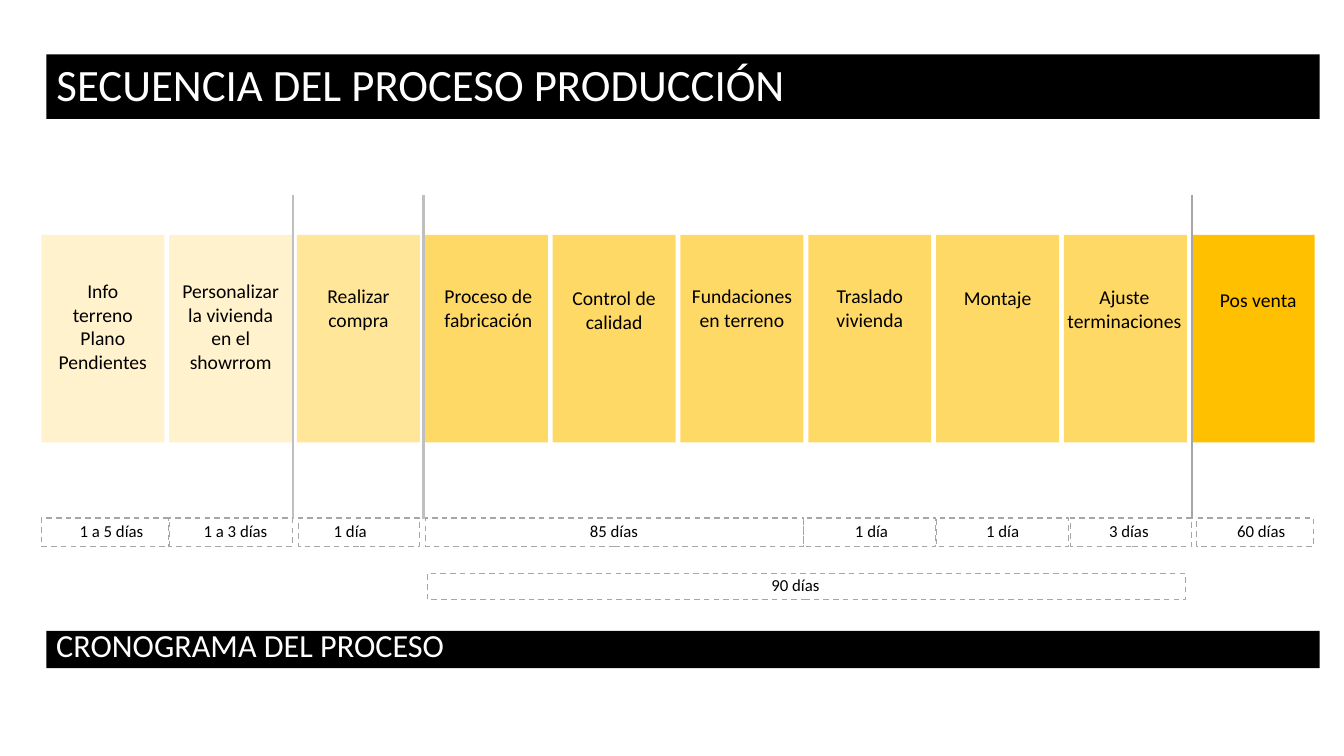
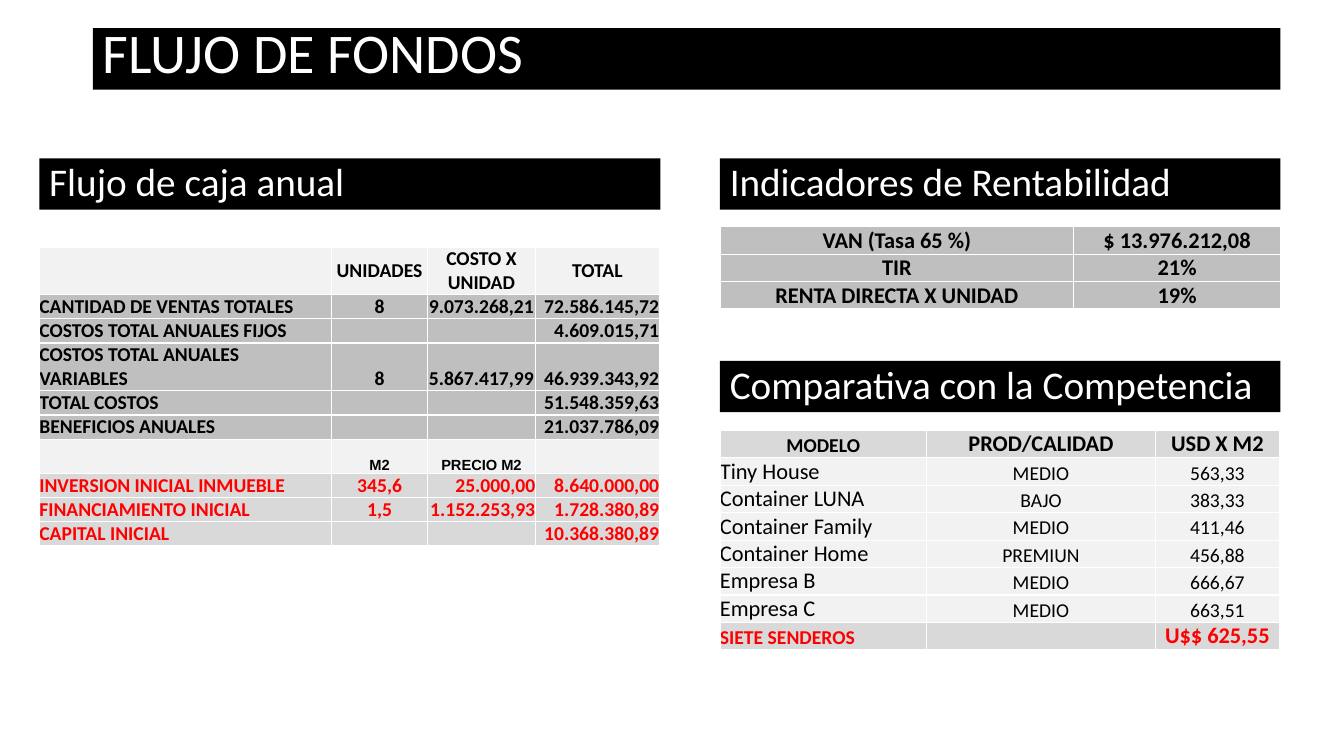
from dataclasses import dataclass

from lxml import etree
from pptx import Presentation
from pptx.dml.color import RGBColor
from pptx.enum.dml import MSO_LINE
from pptx.enum.shapes import MSO_CONNECTOR, MSO_SHAPE
from pptx.enum.text import MSO_ANCHOR, MSO_AUTO_SIZE, PP_ALIGN
from pptx.oxml.ns import qn
from pptx.util import Inches, Pt

BLACK = RGBColor(0x00, 0x00, 0x00)
WHITE = RGBColor(0xFF, 0xFF, 0xFF)
RED = RGBColor(0xFF, 0x00, 0x00)
PALE_GREY = RGBColor(0xF2, 0xF2, 0xF2)
LIGHT_GREY = RGBColor(0xD9, 0xD9, 0xD9)
GREY = RGBColor(0xBF, 0xBF, 0xBF)
DARK_GREY = RGBColor(0xA6, 0xA6, 0xA6)
CREAM = RGBColor(0xFF, 0xF2, 0xCC)
SAND = RGBColor(0xFF, 0xE6, 0x99)
YELLOW = RGBColor(0xFF, 0xD9, 0x66)
AMBER = RGBColor(0xFF, 0xC0, 0x00)

LEFT = PP_ALIGN.LEFT
CENTER = PP_ALIGN.CENTER
RIGHT = PP_ALIGN.RIGHT
TOP = MSO_ANCHOR.TOP
MIDDLE = MSO_ANCHOR.MIDDLE
BOTTOM = MSO_ANCHOR.BOTTOM
RECTANGLE = MSO_SHAPE.RECTANGLE
STRAIGHT = MSO_CONNECTOR.STRAIGHT
DASH = MSO_LINE.DASH
NO_AUTOFIT = MSO_AUTO_SIZE.NONE
ALIGNMENTS = {"l": LEFT, "c": CENTER, "r": RIGHT}
TITLE_ONLY = 5


@dataclass
class RowStyle:
    fill: RGBColor
    aligns: str
    sizes: tuple
    color: RGBColor = BLACK
    bold: bool = True
    font: str = "Calibri"
    anchor: MSO_ANCHOR = BOTTOM


class DeckBuilder:
    font = "Calibri"

    def __init__(self):
        self.deck = Presentation()
        self.deck.slide_width = Inches(13.33)
        self.deck.slide_height = Inches(7.5)
        self.page = None

    def add_page(self):
        layout = self.deck.slide_layouts[TITLE_ONLY]
        self.page = self.deck.slides.add_slide(layout)

    def set_text(self, frame, text, size, color=BLACK, align=LEFT, spacing=None,
                 bold=False, font=None):
        frame.text = text
        for para in frame.paragraphs:
            para.alignment = align
            if spacing:
                para.line_spacing = spacing
            for span in para.runs:
                span.font.size = Pt(size)
                span.font.name = font or self.font
                span.font.bold = bold
                span.font.color.rgb = color

    def place_text(self, box, anchor, left=0.1, top=0.05, right=0.1, bottom=0.05):
        frame = box.text_frame
        frame.word_wrap = True
        frame.auto_size = NO_AUTOFIT
        frame.vertical_anchor = anchor
        frame.margin_left, frame.margin_right = Inches(left), Inches(right)
        frame.margin_top, frame.margin_bottom = Inches(top), Inches(bottom)
        return frame

    def rectangle(self, left, top, width, height, fill=None):
        box = self.page.shapes.add_shape(
            RECTANGLE, Inches(left), Inches(top), Inches(width), Inches(height))
        box.shadow.inherit = False
        if fill is None:
            box.fill.background()
        else:
            box.fill.solid()
            box.fill.fore_color.rgb = fill
        box.line.fill.background()
        return box

    def style_band(self, box, text, size, spacing):
        self.set_text(self.place_text(box, MIDDLE), text, size, WHITE, spacing=spacing)

    def title(self, text, left, top, width, height, size, spacing=0.9):
        box = self.page.shapes.title
        box.left, box.top = Inches(left), Inches(top)
        box.width, box.height = Inches(width), Inches(height)
        box.fill.solid()
        box.fill.fore_color.rgb = BLACK
        self.style_band(box, text, size, spacing)

    def band(self, text, left, top, width, height, size=28, spacing=0.9):
        box = self.rectangle(left, top, width, height, BLACK)
        self.style_band(box, text, size, spacing)

    def card(self, text, left, top, width, height, fill, insets):
        box = self.rectangle(left, top, width, height, fill)
        text_top, text_left, text_right = insets
        frame = self.place_text(box, TOP, text_left, text_top, text_right)
        self.set_text(frame, text, 14, align=CENTER)

    def duration(self, text, left, top, width, height, inset):
        box = self.rectangle(left, top, width, height)
        box.line.color.rgb = DARK_GREY
        box.line.width = Pt(1)
        box.line.dash_style = DASH
        frame = self.place_text(box, MIDDLE, inset, 0, 0, 0.03)
        self.set_text(frame, text, 12)

    def divider(self, x, top, bottom, color):
        line = self.page.shapes.add_connector(
            STRAIGHT, Inches(x), Inches(top), Inches(x), Inches(bottom))
        line.line.color.rgb = color
        line.line.width = Pt(1.5)
        etree.SubElement(line._element.spPr, qn("a:effectLst"))

    def table(self, left, top, widths, rows, row_height, tall_rows=None):
        heights = [row_height] * len(rows)
        for index, height in (tall_rows or {}).items():
            heights[index] = height
        table = self.page.shapes.add_table(
            len(rows), len(widths), Inches(left), Inches(top),
            Inches(sum(widths)), Inches(sum(heights))).table
        table.first_row = False
        table.horz_banding = False
        for column, width in zip(table.columns, widths):
            column.width = Inches(width)
        for row, height, (style, texts) in zip(table.rows, heights, rows):
            row.height = Inches(height)
            for cell, text, align, size in zip(row.cells, texts, style.aligns, style.sizes):
                self.cell(cell, text, style, ALIGNMENTS[align], size)

    def cell(self, cell, text, style, align, size):
        cell.margin_left = cell.margin_right = 0
        cell.margin_top = cell.margin_bottom = 0
        cell.vertical_anchor = style.anchor
        self.set_text(cell.text_frame, text, size, style.color, align,
                      bold=style.bold, font=style.font)
        if not text:
            para = cell.text_frame.paragraphs[0]
            etree.SubElement(para._p, qn("a:endParaRPr"), sz=str(int(size * 100)))
        properties = cell._tc.get_or_add_tcPr()
        for side in ("lnL", "lnR", "lnT", "lnB"):
            border = etree.SubElement(properties, qn(f"a:{side}"), w=str(Pt(1)))
            paint = etree.SubElement(border, qn("a:solidFill"))
            etree.SubElement(paint, qn("a:srgbClr"), val=str(WHITE))
        cell.fill.solid()
        cell.fill.fore_color.rgb = style.fill


def build_process(builder):
    builder.add_page()
    builder.title("SECUENCIA DEL PROCESO PRODUCCIÓN", 0.46, 0.54, 12.63, 0.64, 32)

    first_left, last_left = 0.41, 11.82
    steps = [
        ("Info\nterreno\nPlano\nPendientes", CREAM, (0.44, 0.1, 0.1)),
        ("Personalizar la vivienda en el showrrom", CREAM, (0.44, 0.1, 0.1)),
        ("Realizar\ncompra", SAND, (0.49, 0.1, 0.1)),
        ("Proceso de fabricación", YELLOW, (0.49, 0.12, 0.08)),
        ("Control de calidad", YELLOW, (0.51, 0.1, 0.1)),
        ("Fundaciones\nen terreno", YELLOW, (0.49, 0.1, 0.1)),
        ("Traslado\nvivienda", YELLOW, (0.49, 0.1, 0.1)),
        ("Montaje", YELLOW, (0.51, 0.1, 0.1)),
        ("Ajuste terminaciones", YELLOW, (0.5, 0, 0.02)),
        ("Pos venta", AMBER, (0.53, 0.15, 0.05)),
    ]
    pitch = (last_left - first_left) / (len(steps) - 1)
    for index, (text, fill, insets) in enumerate(steps):
        builder.card(text, first_left + index * pitch, 2.33, 1.22, 2.06, fill, insets)

    for x, color in ((2.91, GREY), (4.2, GREY), (11.82, DARK_GREY)):
        builder.divider(x, 1.93, 5.15, color)

    durations = [
        ("1 a 5 días", 0.41, 1.27, 0.38),
        ("1 a 3 días", 1.67, 1.23, 0.35),
        ("1 día", 2.96, 1.2, 0.35),
        ("85 días", 4.22, 3.75, 1.63),
        ("1 día", 7.97, 1.31, 0.51),
        ("1 día", 9.29, 1.31, 0.49),
        ("3 días", 10.62, 1.2, 0.38),
        ("60 días", 11.87, 1.16, 0.4),
    ]
    for text, left, width, inset in durations:
        builder.duration(text, left, 5.14, width, 0.28, inset)
    builder.duration("90 días", 4.24, 5.69, 7.52, 0.26, 3.41)
    builder.band("CRONOGRAMA DEL PROCESO", 0.46, 6.26, 12.63, 0.37, 23, 0.7)


def build_cash_flow(builder):
    builder.add_page()
    builder.title("FLUJO DE FONDOS", 0.92, 0.28, 11.78, 0.61, 40, 0.7)
    left_column, right_column = 0.39, 7.14
    builder.band("Flujo de caja anual", left_column, 1.57, 6.16, 0.51)
    builder.band("Indicadores de Rentabilidad", right_column, 1.57, 5.56, 0.51)
    builder.band("Comparativa con la Competencia", right_column, 3.58, 5.56, 0.51)

    flow_sizes = (14,) * 4
    header = RowStyle(PALE_GREY, "cccc", flow_sizes, anchor=MIDDLE)
    annual = RowStyle(GREY, "lccr", flow_sizes)
    subheader = RowStyle(PALE_GREY, "cccc", (10.5,) * 4, font="Arial")
    initial = RowStyle(LIGHT_GREY, "lcrr", flow_sizes, RED)
    builder.table(left_column, 2.45, (2.9, 0.95, 1.07, 1.23), [
        (header, ("", "UNIDADES", "COSTO X UNIDAD", "TOTAL")),
        (annual, ("CANTIDAD DE VENTAS TOTALES", "8", "9.073.268,21", "72.586.145,72")),
        (annual, ("COSTOS TOTAL ANUALES FIJOS", "", "", "4.609.015,71")),
        (annual, ("COSTOS TOTAL ANUALES VARIABLES", "8", "5.867.417,99", "46.939.343,92")),
        (annual, ("TOTAL COSTOS", "", "", "51.548.359,63")),
        (annual, ("BENEFICIOS ANUALES", "", "", "21.037.786,09")),
        (subheader, ("", "M2", "PRECIO M2", "")),
        (initial, ("INVERSION INICIAL INMUEBLE", "345,6", "25.000,00", "8.640.000,00")),
        (initial, ("FINANCIAMIENTO INICIAL", "1,5", "1.152.253,93", "1.728.380,89")),
        (initial, ("CAPITAL INICIAL", "", "", "10.368.380,89")),
    ], 0.24, {0: 0.47, 3: 0.47, 6: 0.34})

    indicator = RowStyle(GREY, "cc", (16, 16), anchor=MIDDLE)
    builder.table(right_column, 2.25, (3.51, 2.05), [
        (indicator, ("VAN (Tasa 65 %)", "$ 13.976.212,08")),
        (indicator, ("TIR", "21%")),
        (indicator, ("RENTA DIRECTA X UNIDAD", "19%")),
    ], 0.27)

    heading = RowStyle(LIGHT_GREY, "ccc", (14, 16, 16))
    model = RowStyle(PALE_GREY, "lcc", (16, 14, 14), bold=False)
    own_model = RowStyle(LIGHT_GREY, "lcc", (14, 14, 16), RED)
    builder.table(right_column, 4.27, (2.05, 2.27, 1.23), [
        (heading, ("MODELO", "PROD/CALIDAD", "USD X M2")),
        (model, ("Tiny House", "MEDIO", "563,33")),
        (model, ("Container LUNA", "BAJO", "383,33")),
        (model, ("Container Family", "MEDIO", "411,46")),
        (model, ("Container Home", "PREMIUN", "456,88")),
        (model, ("Empresa B", "MEDIO", "666,67")),
        (model, ("Empresa C", "MEDIO", "663,51")),
        (own_model, ("SIETE SENDEROS", "", "U$$ 625,55")),
    ], 0.27)


def main():
    builder = DeckBuilder()
    build_process(builder)
    build_cash_flow(builder)
    builder.deck.save("out.pptx")


if __name__ == "__main__":
    main()
